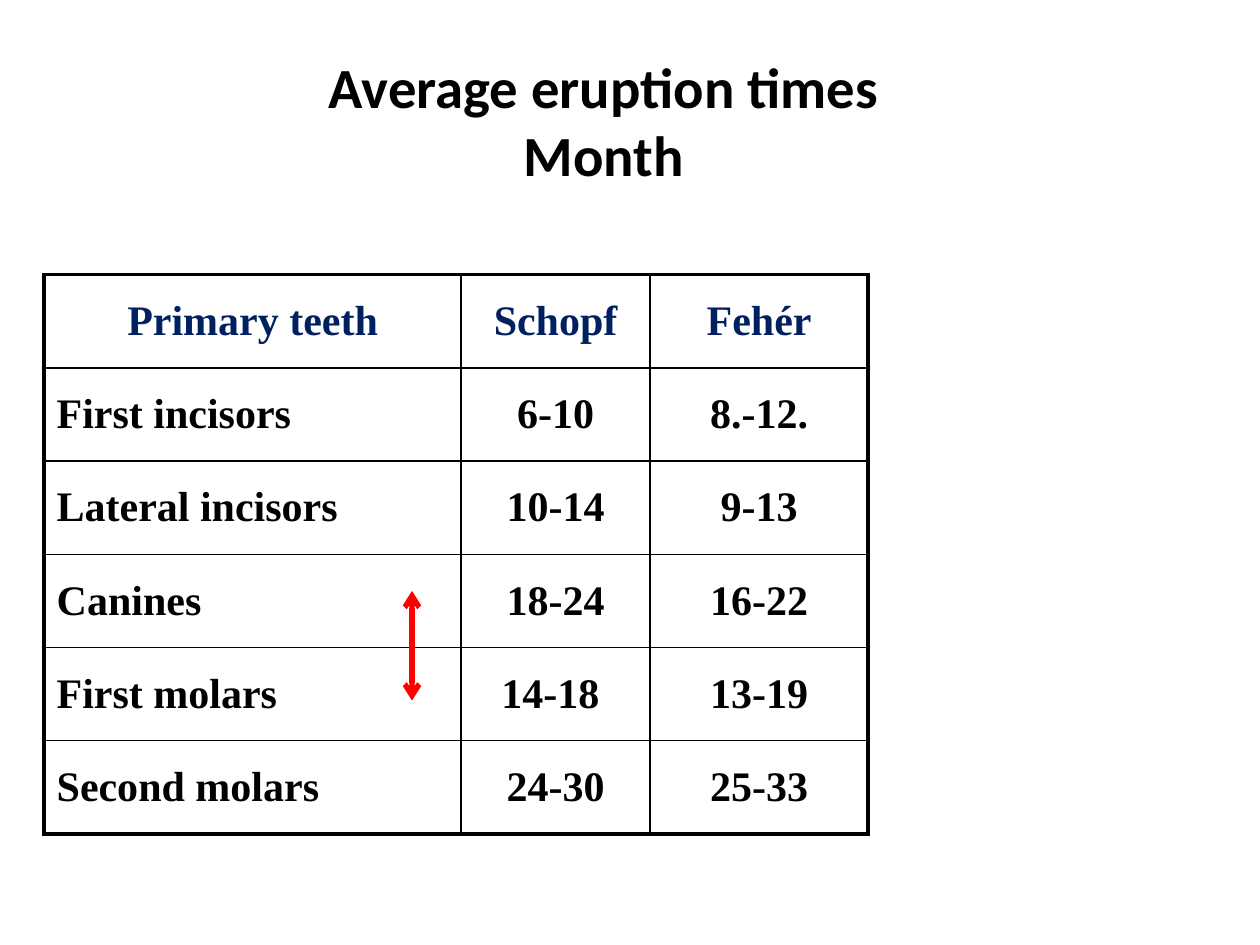
from lxml import etree
from pptx import Presentation
from pptx import util as u
from pptx.dml.color import RGBColor
from pptx.enum import shapes, text
from pptx.oxml.ns import qn

COLORS = {"ink": "000000", "heading": "002060", "paper": "FFFFFF", "swap": "FF0000"}
OUTER, INNER = 2.25, 1

ERUPTION_TIMES = [
    ("Primary teeth", "Schopf", "Fehér"),
    ("First incisors", " 6-10 ", "8.-12."),
    ("Lateral incisors", "10-14", "9-13"),
    ("Canines", "18-24", "16-22"),
    ("First molars", "14-18 ", "13-19"),
    ("Second molars", "24-30", "25-33"),
]
COLUMN_WIDTHS = [3.31, 1.5, 1.73]
ROW_HEIGHT = 0.74


def rgb(name):
    return RGBColor.from_string(COLORS[name])


def format_font(font, color, **values):
    for key, value in values.items():
        setattr(font, key, value)
    font.color.rgb = rgb(color)


def add_title(slide, wording):
    title = slide.shapes.title
    place = {"left": 1.33, "top": 0.58, "width": 6.92, "height": 1.25}
    for key, value in place.items():
        setattr(title, key, u.Inches(value))
    frame = title.text_frame
    frame.text = wording
    frame.word_wrap = True
    frame.auto_size = text.MSO_AUTO_SIZE.NONE
    frame.vertical_anchor = text.MSO_ANCHOR.MIDDLE
    frame.margin_bottom = u.Inches(0.55)  # lifts the two lines in the box
    heading = frame.paragraphs[0]
    heading.alignment = text.PP_ALIGN.CENTER
    for run in heading.runs:
        format_font(run.font, "ink", name="Calibri", size=u.Pt(32.4), bold=True)


def set_borders(cell, widths):
    properties = cell._tc.get_or_add_tcPr()
    for side, width in widths.items():
        line = etree.SubElement(properties, qn(f"a:ln{side}"), w=str(u.Pt(width)))
        fill = etree.SubElement(line, qn("a:solidFill"))
        etree.SubElement(fill, qn("a:srgbClr"), val=COLORS["ink"])


def fill_cell(cell, wording, is_header, is_label):
    cell.fill.solid()
    cell.fill.fore_color.rgb = rgb("paper")
    cell.vertical_anchor = text.MSO_ANCHOR.MIDDLE
    cell.text = wording
    entry = cell.text_frame.paragraphs[0]
    left_aligned = is_label and not is_header
    entry.alignment = text.PP_ALIGN.LEFT if left_aligned else text.PP_ALIGN.CENTER
    format_font(entry.runs[0].font, "heading" if is_header else "ink",
                name="Times New Roman", size=u.Pt(24), bold=True)


def add_eruption_table(slide, left, top):
    last_row, last_col = len(ERUPTION_TIMES) - 1, len(COLUMN_WIDTHS) - 1
    frame = slide.shapes.add_table(
        last_row + 1, last_col + 1, u.Inches(left), u.Inches(top),
        u.Inches(sum(COLUMN_WIDTHS)), u.Inches(ROW_HEIGHT * (last_row + 1)))
    table = frame.table
    table.first_row = table.horz_banding = False
    for column, width in zip(table.columns, COLUMN_WIDTHS):
        column.width = u.Inches(width)
    for r, entries in enumerate(ERUPTION_TIMES):
        table.rows[r].height = u.Inches(ROW_HEIGHT)
        for c, wording in enumerate(entries):
            on_edge = {"L": c == 0, "R": c == last_col, "T": r == 0, "B": r == last_row}
            cell = table.cell(r, c)
            set_borders(cell, {side: OUTER if edge else INNER
                               for side, edge in on_edge.items()})
            fill_cell(cell, wording, is_header=r == 0, is_label=c == 0)


def add_swap_arrow(slide, x, top, bottom):
    arrow = slide.shapes.add_connector(
        shapes.MSO_CONNECTOR.STRAIGHT,
        u.Inches(x), u.Inches(top), u.Inches(x), u.Inches(bottom))
    arrow.line.color.rgb = rgb("swap")
    arrow.line.width = u.Pt(3)
    line = arrow.line._get_or_add_ln()
    for end in ("a:headEnd", "a:tailEnd"):
        etree.SubElement(line, qn(end), type="arrow")
    etree.SubElement(arrow._element.spPr, qn("a:effectLst"))


def main():
    deck = Presentation()
    deck.slide_width, deck.slide_height = u.Inches(10), u.Inches(7.5)
    slide = deck.slides.add_slide(deck.slide_layouts[5])

    # Title in two lines
    add_title(slide, "Average eruption times\vMonth")
    # Eruption times by author
    add_eruption_table(slide, left=0.35, top=2.18)
    # Canines and first molars change order
    add_swap_arrow(slide, x=3.27, top=4.69, bottom=5.56)

    deck.save("out.pptx")


if __name__ == "__main__":
    main()
